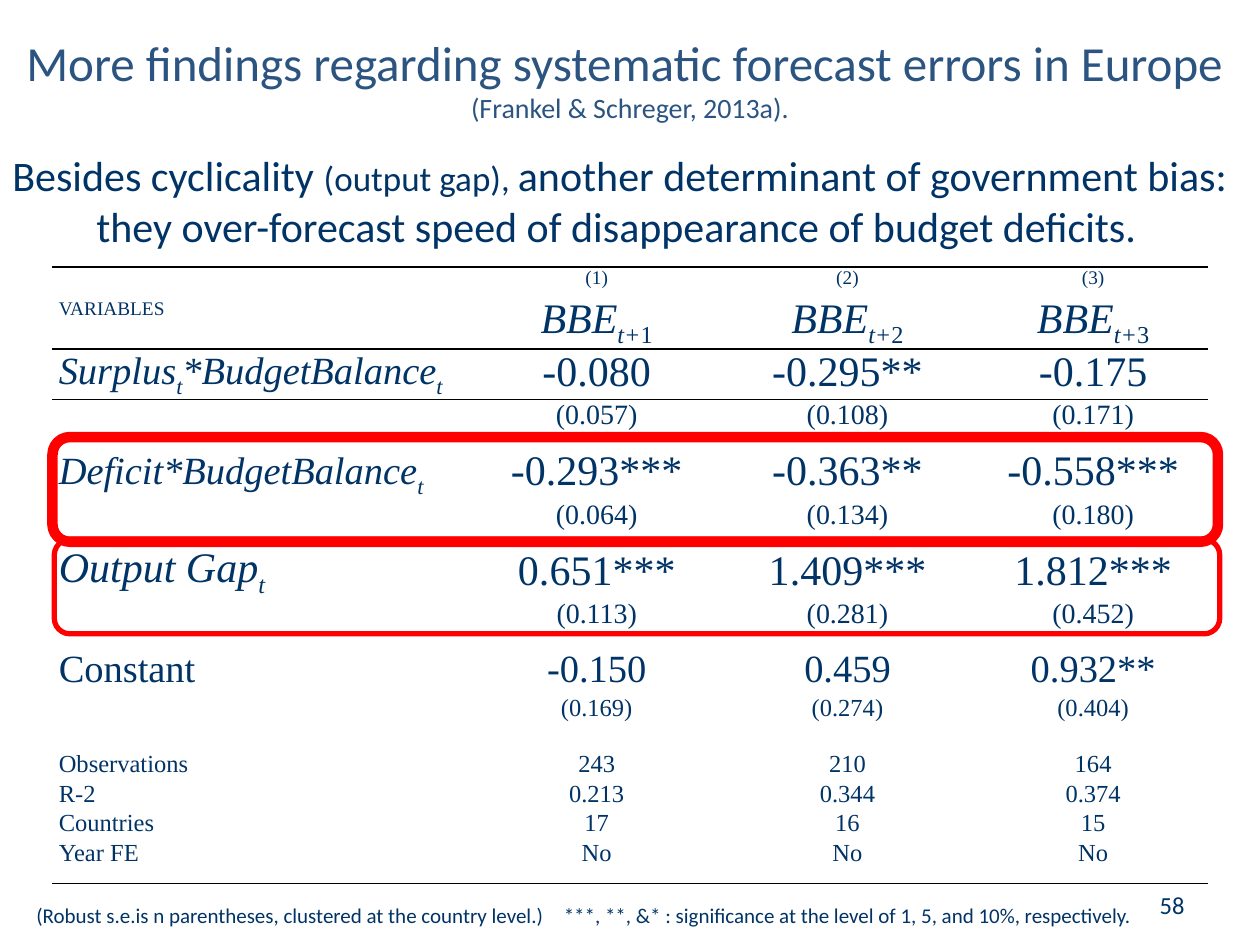
from lxml.etree import SubElement
from pptx import Presentation
from pptx.dml.color import RGBColor
from pptx.enum.shapes import MSO_SHAPE
from pptx.enum.text import MSO_ANCHOR, PP_ALIGN
from pptx.oxml import parse_xml
from pptx.oxml.ns import nsdecls, qn
from pptx.util import Pt

COLORS = {"title": "2B5481", "text": "003366", "rule": "000000", "highlight": "FF0000"}
SANS, SERIF = "Calibri", "Times New Roman"
NO_GRID_STYLE = "{2D5ABB26-0587-4C30-8999-92F81FD0307C}"


def add_span(para, text, size=14, font=SERIF, color="text", italic=False, sub=False):
    """Add formatted text to a paragraph; a newline becomes a line break."""
    for index, line in enumerate(text.split("\n")):
        if index:
            para.add_line_break()
        if not line:
            continue
        span = para.add_run()
        span.text = line
        span.font.size = Pt(size)
        span.font.name = font
        span.font.italic = italic
        span.font.color.rgb = RGBColor.from_string(COLORS[color])
        if sub:
            span._r.get_or_add_rPr().set("baseline", "-25000")


class SlideBuilder:
    def __init__(self, page):
        self.page = page

    def title(self, left, top, width, height, spans):
        box = self.page.shapes.title
        box.left, box.top, box.width, box.height = map(Pt, (left, top, width, height))
        box.text_frame.vertical_anchor = MSO_ANCHOR.MIDDLE
        para = box.text_frame.paragraphs[0]
        para.alignment = PP_ALIGN.CENTER
        for text, size in spans:
            add_span(para, text, size=size, font=SANS, color="title")

    def text(self, left, top, width, height, spans, align=PP_ALIGN.LEFT,
             anchor=MSO_ANCHOR.TOP, hanging=0, tab=0):
        box = self.page.shapes.add_textbox(*map(Pt, (left, top, width, height)))
        box.text_frame.word_wrap = True
        box.text_frame.vertical_anchor = anchor
        para = box.text_frame.paragraphs[0]
        para.alignment = align
        properties = para._p.get_or_add_pPr()
        if hanging:
            properties.set("marL", str(Pt(hanging)))
            properties.set("indent", str(-Pt(hanging)))
        if tab:
            stops = SubElement(properties, qn("a:tabLst"))
            SubElement(stops, qn("a:tab"), pos=str(Pt(tab)), algn="l")
        for text, size in spans:
            add_span(para, text, size=size, font=SANS)

    def cell(self, cell, spans, align, size, height):
        cell.margin_left = cell.margin_right = Pt(3.6)
        cell.margin_top = cell.margin_bottom = 0
        cell.fill.background()
        para = cell.text_frame.paragraphs[0]
        para.alignment = align
        # A fixed line height keeps subscripts from stretching the row
        if any(style.get("sub") for _, style in spans):
            para.line_spacing = Pt(height)
        for text, style in spans:
            add_span(para, text, **{"size": size, **style})
        if not spans:
            SubElement(para._p, qn("a:endParaRPr")).set("sz", str(size * 100))

    def border(self, cell, side):
        cell._tc.get_or_add_tcPr().insert(0, parse_xml(
            f'<a:{side} {nsdecls("a")} w="{Pt(1)}"><a:solidFill>'
            f'<a:srgbClr val="{COLORS["rule"]}"/></a:solidFill></a:{side}>'))

    def table(self, left, top, widths, rows, rules):
        frame = self.page.shapes.add_table(
            len(rows), len(widths), Pt(left), Pt(top),
            Pt(sum(widths)), Pt(sum(row[0] for row in rows)))
        table = frame.table
        table.first_row = table.horz_banding = False
        table._tbl.find(".//" + qn("a:tableStyleId")).text = NO_GRID_STYLE
        for column, width in zip(table.columns, widths):
            column.width = Pt(width)
        for index, (height, size, label, values) in enumerate(rows):
            table.rows[index].height = Pt(height)
            for column, spans in enumerate([label, *values]):
                align = PP_ALIGN.CENTER if column else PP_ALIGN.LEFT
                self.cell(table.cell(index, column), spans, align, size, height)
        for index, side in rules:
            for column in range(len(widths)):
                self.border(table.cell(index, column), side)

    def highlight(self, left, top, width, height, weight):
        box = self.page.shapes.add_shape(
            MSO_SHAPE.ROUNDED_RECTANGLE, *map(Pt, (left, top, width, height)))
        box.shadow.inherit = False
        box.fill.background()
        box.line.color.rgb = RGBColor.from_string(COLORS["highlight"])
        box.line.width = Pt(weight)


def plain(text, **style):
    return [(text, style)] if text else []


def variable(name, size):
    """Italic variable name; each underscore stands for a subscript t."""
    spans = []
    for index, part in enumerate(name.split("_")):
        if index:
            spans.append(("t", {"size": size, "italic": True, "sub": True}))
        spans += plain(part, size=size, italic=True)
    return spans


def row(height, size, label, values):
    return height, size, label, [plain(value) for value in values]


def lead(step):
    return [("BBE", {"italic": True}), ("t+", {"italic": True, "sub": True}),
            (str(step), {"sub": True})]


def main():
    deck = Presentation()
    deck.slide_width, deck.slide_height = Pt(720), Pt(540)
    page = deck.slides.add_slide(deck.slide_layouts[5])
    builder = SlideBuilder(page)

    # Heading and main message
    builder.title(0, 5.8, 720, 77.8, [
        ("More findings regarding systematic forecast errors in Europe \n", 28),
        ("(Frankel & Schreger, 2013a).", 16)])
    builder.text(0, 82, 720, 72, [
        ("Besides cyclicality ", 24), ("(output gap), ", 20),
        ("another determinant of government bias:\n"
         "they over-forecast speed of disappearance of budget deficits.", 24)],
        hanging=48)

    # Slide number
    builder.text(516, 491.8, 168, 37.4, [("58", 14)],
                 align=PP_ALIGN.RIGHT, anchor=MSO_ANCHOR.BOTTOM)

    # Regression table: height, size, label, values
    rows = [
        row(18, 11, [], ["(1)", "(2)", "(3)"]),
        (28.8, 24, plain("VARIABLES", size=11), [lead(step) for step in (1, 2, 3)]),
        row(28.8, 24, variable("Surplus_*BudgetBalance_", 22),
            ["-0.080", "-0.295**", "-0.175"]),
        row(28.1, 16, [], ["(0.057)", "(0.108)", "(0.171)"]),
        row(28.8, 24, variable("Deficit*BudgetBalance_", 22),
            ["-0.293***", "-0.363**", "-0.558***"]),
        row(28.1, 16, [], ["(0.064)", "(0.134)", "(0.180)"]),
        row(28.8, 24, variable("Output Gap_", 24),
            ["0.651***", "1.409***", "1.812***"]),
        row(28.1, 16, [], ["(0.113)", "(0.281)", "(0.452)"]),
        row(26.6, 22, plain("Constant"), ["-0.150", "0.459", "0.932**"]),
        row(18, 14, [], ["(0.169)", "(0.274)", "(0.404)"]),
        row(14.4, 12, [], ["", "", ""]),
        row(16.6, 14, plain("Observations"), ["243", "210", "164"]),
        row(16.6, 14, plain("R-2"), ["0.213", "0.344", "0.374"]),
        row(16.6, 14, plain("Countries"), ["17", "16", "15"]),
        row(25.2, 14, plain("Year FE"), ["No", "No", "No"]),
    ]
    builder.table(30, 152.6, [242.6, 136.8, 149.8, 131], rows,
                  rules=[(0, "lnT"), (1, "lnB"), (2, "lnT"), (len(rows) - 1, "lnB")])

    # Table note
    builder.text(13.7, 511.9, 652.3, 21.6, [
        ("(Robust s.e.is n parentheses, clustered at the country level.)\t"
         "***, **, &* : significance at the level of 1, 5, and 10%, respectively.", 12)],
        anchor=MSO_ANCHOR.MIDDLE, tab=301.4)

    # Highlighted results
    builder.highlight(30, 249.8, 666, 59.8, 6)
    builder.highlight(31, 308.2, 666, 54, 3)

    deck.save("out.pptx")


if __name__ == "__main__":
    main()
